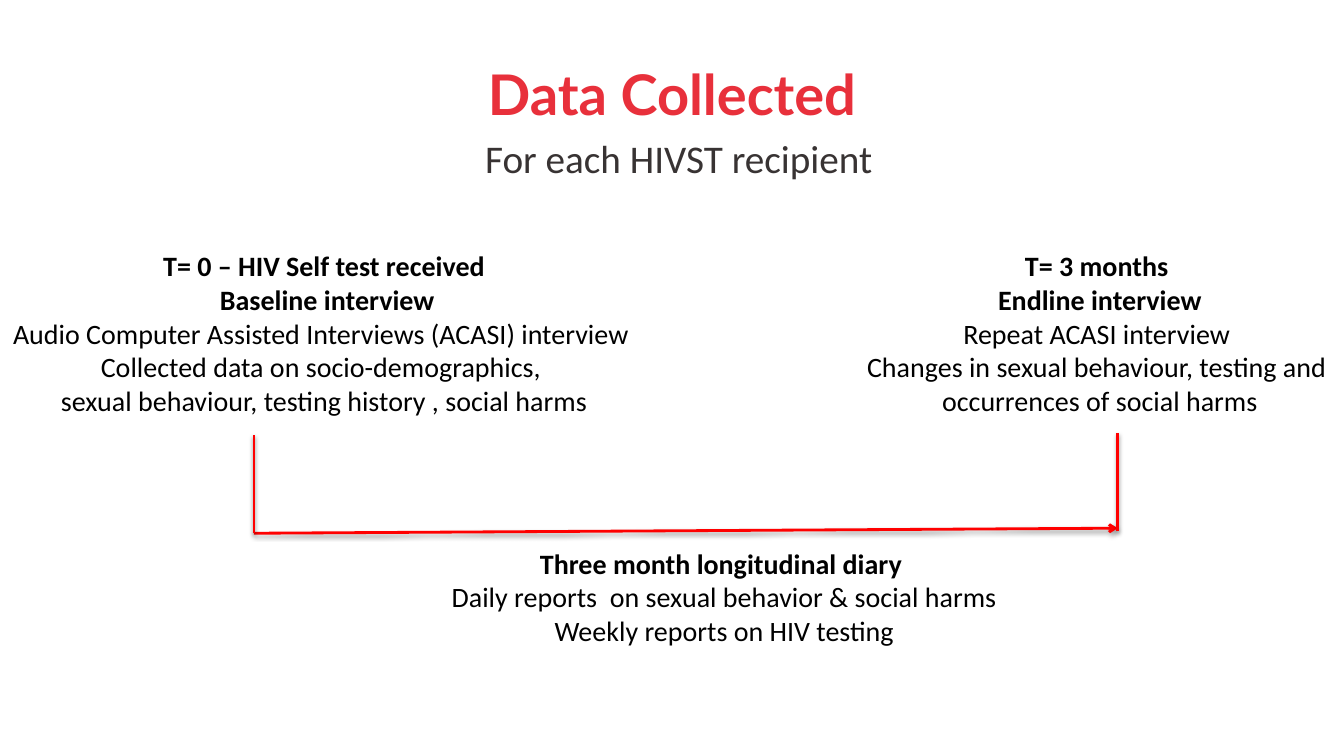
from lxml.etree import SubElement as Sub
from pptx import Presentation
from pptx.dml.color import RGBColor
from pptx.enum.shapes import MSO_CONNECTOR as Link
from pptx.enum.text import MSO_ANCHOR as Anchor, MSO_AUTO_SIZE as Auto, PP_ALIGN as Align
from pptx.oxml.ns import qn
from pptx.util import Pt

RED, TITLE, GREY, BLACK = "FF0000", "E8303B", "383333", "000000"

START = [
    "T= 0 – HIV Self test received",
    "Baseline interview",
    "Audio Computer Assisted Interviews (ACASI) interview ",
    "Collected data on socio-demographics, ",
    "sexual behaviour, testing history , social harms",
]
END = [
    "T= 3 months ",
    "Endline interview",
    "Repeat ACASI interview ",
    "Changes in sexual behaviour, testing and ",
    "occurrences of social harms",
]
DIARY = [
    "Three month longitudinal diary ",
    "Daily reports  on sexual behavior & social harms",
    "Weekly reports on HIV testing",
]


def color(code):
    return RGBColor.from_string(code)


def place(shape, box):
    shape.left, shape.top, shape.width, shape.height = (Pt(n) for n in box)


def write(para, text, size=20, font="Calibri", code=BLACK, bold=False, indent=0):
    props = para._p.get_or_add_pPr()
    props.set("marL", str(Pt(indent)))
    props.set("indent", "0")
    Sub(props, qn("a:buNone"))
    para.alignment = Align.CENTER
    para.space_before = Pt(0)
    run = para.add_run()
    run.text = text
    run.font.size, run.font.name = Pt(size), font
    run.font.bold = bold
    run.font.color.rgb = color(code)


def heading(slide, box):
    """Title with its subtitle below, in the template's placeholders."""
    left, top, width, height = box
    title, body = slide.shapes.title, slide.placeholders[1]
    place(title, (left, top, width, 90))
    place(body, (left, top + 70.5, width + 11.5, height - 70.5))
    for shape in (title, body):
        shape.text_frame.auto_size = Auto.NONE
    title.text_frame.vertical_anchor = Anchor.MIDDLE
    write(title.text_frame.paragraphs[0], "Data Collected",
          size=40, font="Lato", code=TITLE, bold=True)
    write(body.text_frame.paragraphs[0], "For each HIVST recipient ",
          size=28, code=GREY, indent=4.5)


def stage(slide, box, lines, heads, indents=(), wrap=False):
    """Centred text block whose first lines are bold heads."""
    shape = slide.shapes.add_textbox(*(Pt(n) for n in box))
    frame = shape.text_frame
    frame.word_wrap = wrap
    for i, text in enumerate(lines):
        para = frame.add_paragraph() if i else frame.paragraphs[0]
        write(para, text, bold=i < heads, indent=4.5 if i in indents else 0)


def line(slide, start, end, arrow=False):
    ends = [Pt(n) for n in (*start, *end)]
    link = slide.shapes.add_connector(Link.STRAIGHT, *ends)
    link.line.color.rgb = color(RED)
    link.line.width = Pt(2)
    if arrow:
        Sub(link.line._get_or_add_ln(), qn("a:tailEnd"), type="arrow")
    # Soft shadow below the line
    effects = Sub(link._element.spPr, qn("a:effectLst"))
    shadow = Sub(effects, qn("a:outerShdw"), blurRad=str(Pt(3.1)),
                 dist=str(Pt(1.6)), dir="5400000", rotWithShape="0")
    tint = Sub(shadow, qn("a:srgbClr"), val=BLACK)
    Sub(tint, qn("a:alpha"), val="38000")


def bracket(slide, box):
    """Time arrow with an upright at each end."""
    left, top, width, height = box
    right, base = left + width, top + height
    line(slide, (left, base), (right, base - 3.6), arrow=True)
    line(slide, (left, base), (left, top + 1.4))
    line(slide, (right, base - 1.4), (right, top))


def main():
    deck = Presentation()
    deck.slide_width, deck.slide_height = Pt(960), Pt(540)
    slide = deck.slides.add_slide(deck.slide_layouts[1])
    heading(slide, (48, 21.6, 864, 427))
    bracket(slide, (181.4, 309.6, 617, 71.3))
    stage(slide, (0, 174.2, 463, 172), START, heads=2, indents=(1,))
    stage(slide, (275, 386.6, 480.2, 80), DIARY, heads=1, indents=(0, 1, 2), wrap=True)
    stage(slide, (610.6, 174.2, 350, 172), END, heads=2)
    deck.save("out.pptx")


if __name__ == "__main__":
    main()
